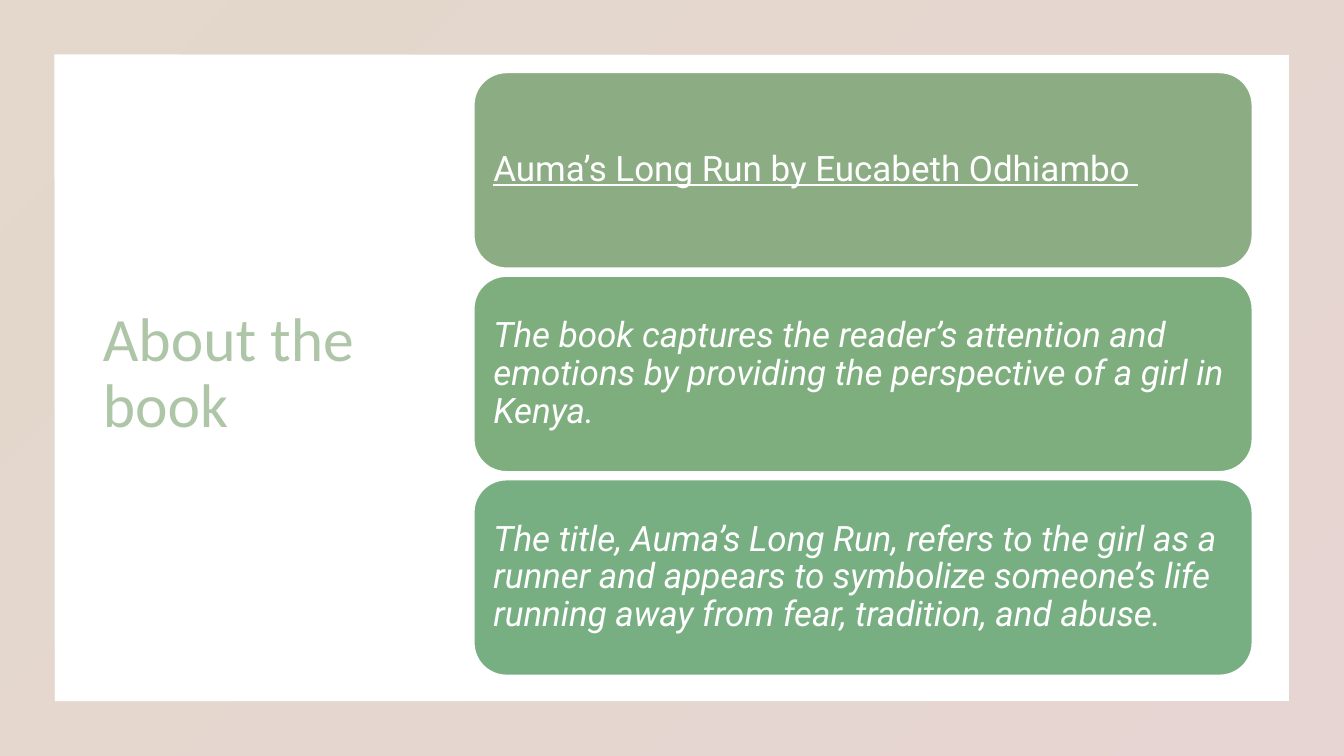
from lxml import etree
from pptx import Presentation
from pptx.dml.color import RGBColor
from pptx.enum import shapes, text
from pptx.oxml.ns import qn
from pptx.util import Inches, Pt

CARDS = [
    ("8CAD83", "Auma’s Long Run by Eucabeth Odhiambo ", {"underline": True}),
    ("7EAE7E", "The book captures the reader’s attention and emotions by "
     "providing the perspective of a girl in Kenya.", {"italic": True}),
    ("78AF82", "The title, Auma’s Long Run, refers to the girl as a runner and "
     "appears to symbolize someone’s life running away from fear, tradition, "
     "and abuse.", {"italic": True}),
]
CARD_TOP, CARD_HEIGHT, CARD_PITCH = 0.72, 1.94, 2.02


def rgb(value):
    return RGBColor.from_string(value)


def set_attributes(target, values):
    for name, value in values.items():
        setattr(target, name, value)


def fill_gradient(fill, element, colours, opacity, angle):
    """Give a fill two stops of equal opacity (percent)."""
    fill.gradient()
    fill.gradient_angle = angle
    for stop, colour in zip(fill.gradient_stops, colours):
        stop.color.rgb = rgb(colour)
    for colour in element.xpath(".//a:gsLst//a:srgbClr"):
        etree.SubElement(colour, qn("a:alpha"), val=str(opacity * 1000))


def write_text(shape, wording, font_values):
    """Write one left-aligned, vertically centred paragraph; return its font."""
    frame = shape.text_frame
    set_attributes(frame, {
        "word_wrap": True,
        "auto_size": text.MSO_AUTO_SIZE.NONE,
        "vertical_anchor": text.MSO_ANCHOR.MIDDLE,
    })
    paragraph = frame.paragraphs[0]
    set_attributes(paragraph, {"alignment": text.PP_ALIGN.LEFT, "line_spacing": 0.9})
    run = paragraph.add_run()
    run.text = wording
    set_attributes(run.font, font_values)
    return run.font


def add_border(slide, width, height):
    border = slide.shapes.add_shape(shapes.MSO_SHAPE.FRAME, 0, 0, width, height)
    border.shadow.inherit = False
    border.adjustments[0] = 0.072
    border.line.fill.background()
    fill_gradient(border.fill, border._element, ("BA9E7F", "C49791"), 40, 315)


def format_title(title):
    set_attributes(title, {"left": Inches(0.92), "top": Inches(0.67),
                           "width": Inches(3.5), "height": Inches(6.09)})
    font = write_text(title, "About the book", {"name": "Calibri", "size": Pt(44)})
    fill_gradient(font.fill, title._element, ("8CAD83", "C49791"), 70, 0)


def add_card(group, top, colour, wording, emphasis):
    card = group.shapes.add_shape(
        shapes.MSO_SHAPE.ROUNDED_RECTANGLE,
        Inches(4.7), Inches(top), Inches(7.72), Inches(CARD_HEIGHT))
    card.shadow.inherit = False
    card.fill.solid()
    card.fill.fore_color.rgb = rgb(colour)
    card.line.color.rgb = rgb("FFFFFF")
    card.line.width = Pt(1)
    for side in ("left", "right", "top", "bottom"):
        setattr(card.text_frame, f"margin_{side}", Inches(0.1))
    font = write_text(card, wording, {"name": "Roboto", "size": Pt(25), **emphasis})
    font.color.rgb = rgb("FFFFFF")


def main():
    presentation = Presentation()
    presentation.slide_width = Inches(13.33)
    presentation.slide_height = Inches(7.5)
    slide = presentation.slides.add_slide(presentation.slide_layouts[5])
    add_border(slide, presentation.slide_width, presentation.slide_height)
    format_title(slide.shapes.title)
    group = slide.shapes.add_group_shape()
    for index, card in enumerate(CARDS):
        add_card(group, CARD_TOP + index * CARD_PITCH, *card)
    presentation.save("out.pptx")


if __name__ == "__main__":
    main()
